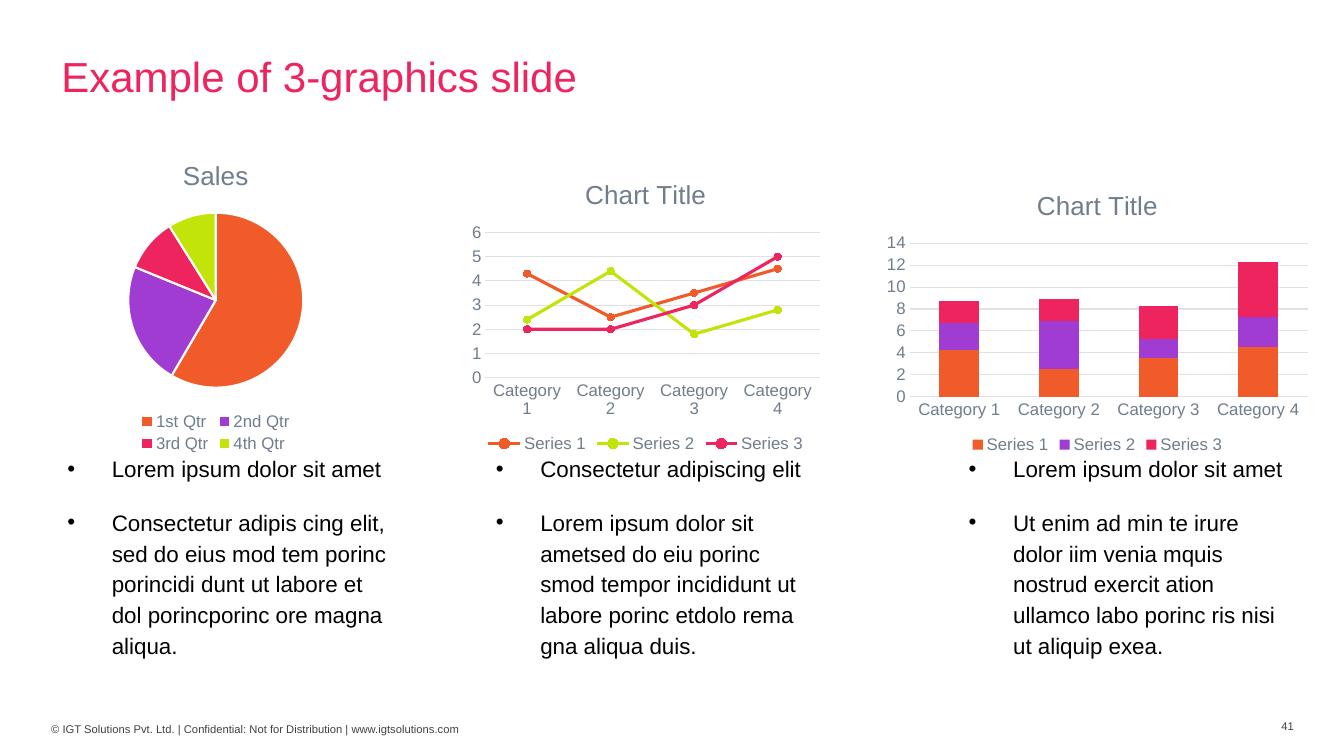
from lxml import etree
from pptx import Presentation
from pptx import util as u
from pptx.chart.data import CategoryChartData
from pptx.dml.color import RGBColor
from pptx.enum import chart as ch
from pptx.enum import text
from pptx.oxml.ns import qn


class Theme:
    font = "Arial"
    orange, purple, pink, lime = "F15A29", "A13CD3", "ED245D", "C3E408"
    black, white = "000000", "FFFFFF"
    footer, label, grid = "414042", "6F7D8C", "DEE1E5"
    title_size, body_size, footer_size = 30, 16, 8
    chart_title_size, label_size = 18.6, 12


# Content: boxes are left, top, width, height in inches
TITLE = ("Example of 3-graphics slide", (0.51, 0.51, 12.32, 0.76))
FOOTERS = [
    ("© IGT Solutions Pvt. Ltd. | Confidential: Not for Distribution | www.igtsolutions.com",
     (0.41, 7.12, 10.64, 0.4)),
    ("41", (12.61, 7.09, 0.44, 0.4)),
]
BULLET_TOP, BULLET_HEIGHT = 4.38, 2
BULLET_COLUMNS = [
    (0.34, 3.59, [
        "Lorem ipsum dolor sit amet",
        "Consectetur adipis cing elit, sed do eius mod tem porinc porincidi dunt "
        "ut labore et dol porincporinc ore magna aliqua."]),
    (4.59, 3.56, [
        "Consectetur adipiscing elit",
        "Lorem ipsum dolor sit ametsed do eiu porinc smod tempor incididunt ut "
        "labore porinc etdolo rema gna aliqua duis."]),
    (9.28, 3.56, [
        "Lorem ipsum dolor sit amet",
        "Ut enim ad min te irure dolor iim venia mquis nostrud exercit ation "
        "ullamco labo porinc ris nisi ut aliquip exea."]),
]
CATEGORIES = ["Category 1", "Category 2", "Category 3", "Category 4"]
SERIES = {
    "Series 1": [4.3, 2.5, 3.5, 4.5],
    "Series 2": [2.4, 4.4, 1.8, 2.8],
    "Series 3": [2, 2, 3, 5],
}
QUARTERS = ["1st Qtr", "2nd Qtr", "3rd Qtr", "4th Qtr"]
SALES = {"Sales": [59, 23, 10, 9]}


def color(value):
    return RGBColor.from_string(value)


def style_font(font, size, value):
    font.name = Theme.font
    font.size = u.Pt(size)
    font.bold = False
    font.color.rgb = color(value)


def add_text(slide, box, lines, size, value):
    frame = slide.shapes.add_textbox(*map(u.Inches, box)).text_frame
    frame.word_wrap = True
    frame.vertical_anchor = text.MSO_ANCHOR.TOP
    frame.text = "\n".join(lines)
    for paragraph in frame.paragraphs:
        for run in paragraph.runs:
            style_font(run.font, size, value)
    return frame


def add_bullets(slide, left, width, lines):
    frame = add_text(slide, (left, BULLET_TOP, width, BULLET_HEIGHT), lines,
                     Theme.body_size, Theme.black)
    frame.margin_left = frame.margin_right = u.Inches(0.1)
    frame.margin_top = frame.margin_bottom = u.Inches(0.1)
    for index, paragraph in enumerate(frame.paragraphs):
        paragraph.line_spacing = 1.15
        paragraph.space_before = u.Pt(16 if index else 0)
        properties = paragraph._p.get_or_add_pPr()
        properties.set("marL", str(u.Inches(0.67)))
        properties.set("indent", str(u.Inches(-0.44)))
        bullet_font = etree.SubElement(properties, qn("a:buFont"))
        bullet_font.set("typeface", Theme.font)
        etree.SubElement(properties, qn("a:buChar")).set("char", "•")


def add_chart(slide, kind, box, title, categories, series):
    data = CategoryChartData()
    data.categories = categories
    for name, values in series.items():
        data.add_series(name, values)
    chart = slide.shapes.add_chart(kind, *map(u.Inches, box), data).chart
    style_font(chart.font, Theme.label_size, Theme.label)
    chart.has_title = True
    chart.chart_title.include_in_layout = False
    chart.chart_title.text_frame.text = title
    title_run = chart.chart_title.text_frame.paragraphs[0].runs[0]
    style_font(title_run.font, Theme.chart_title_size, Theme.label)
    chart.has_legend = True
    chart.legend.position = ch.XL_LEGEND_POSITION.BOTTOM
    chart.legend.include_in_layout = False
    style_font(chart.legend.font, Theme.label_size, Theme.label)
    return chart


def style_line(line, value, width):
    line.color.rgb = color(value)
    line.width = u.Pt(width)


def style_fill(fill, value):
    fill.solid()
    fill.fore_color.rgb = color(value)


def style_axes(chart, maximum, unit):
    for axis in (chart.category_axis, chart.value_axis):
        axis.major_tick_mark = axis.minor_tick_mark = ch.XL_TICK_MARK.NONE
        style_font(axis.tick_labels.font, Theme.label_size, Theme.label)
    style_line(chart.category_axis.format.line, Theme.grid, 0.75)
    values = chart.value_axis
    values.minimum_scale, values.maximum_scale, values.major_unit = 0, maximum, unit
    values.format.line.fill.background()
    values.has_major_gridlines = True
    style_line(values.major_gridlines.format.line, Theme.grid, 0.75)


def add_stacked_chart(slide):
    chart = add_chart(slide, ch.XL_CHART_TYPE.COLUMN_STACKED, (8.71, 1.71, 4.35, 2.83),
                      "Chart Title", CATEGORIES, SERIES)
    style_axes(chart, 14, 2)
    plot = chart.plots[0]
    plot.vary_by_categories = False
    plot.gap_width, plot.overlap = 150, 100
    for series, value in zip(plot.series, (Theme.orange, Theme.purple, Theme.pink)):
        style_fill(series.format.fill, value)


def add_line_chart(slide):
    chart = add_chart(slide, ch.XL_CHART_TYPE.LINE_MARKERS, (4.61, 1.6, 3.59, 2.93),
                      "Chart Title", CATEGORIES, SERIES)
    style_axes(chart, 6, 1)
    plot = chart.plots[0]
    plot.vary_by_categories = False
    for series, value in zip(plot.series, (Theme.orange, Theme.lime, Theme.pink)):
        series.smooth = False
        style_line(series.format.line, value, 2.25)
        series.marker.style = ch.XL_MARKER_STYLE.CIRCLE
        series.marker.size = 5
        style_fill(series.marker.format.fill, value)
        style_line(series.marker.format.line, value, 0.75)


def add_pie_chart(slide):
    chart = add_chart(slide, ch.XL_CHART_TYPE.PIE, (0.52, 1.41, 3.24, 3.12),
                      "Sales", QUARTERS, SALES)
    plot = chart.plots[0]
    plot.vary_by_categories = True
    colors = (Theme.orange, Theme.purple, Theme.pink, Theme.lime)
    for index, value in enumerate(colors):
        point = plot.series[0].points[index]
        style_fill(point.format.fill, value)
        style_line(point.format.line, Theme.white, 1.5)


def main():
    presentation = Presentation()
    presentation.slide_width = u.Inches(13.33)
    presentation.slide_height = u.Inches(7.5)
    slide = presentation.slides.add_slide(presentation.slide_layouts[6])

    # Footer, bullets and title
    for line, box in FOOTERS:
        add_text(slide, box, [line], Theme.footer_size, Theme.footer)
    for column in BULLET_COLUMNS:
        add_bullets(slide, *column)
    heading, box = TITLE
    frame = add_text(slide, box, [heading], Theme.title_size, Theme.pink)
    frame.paragraphs[0].line_spacing = 0.9

    # Charts
    add_stacked_chart(slide)
    add_line_chart(slide)
    add_pie_chart(slide)
    presentation.save("out.pptx")


if __name__ == "__main__":
    main()
